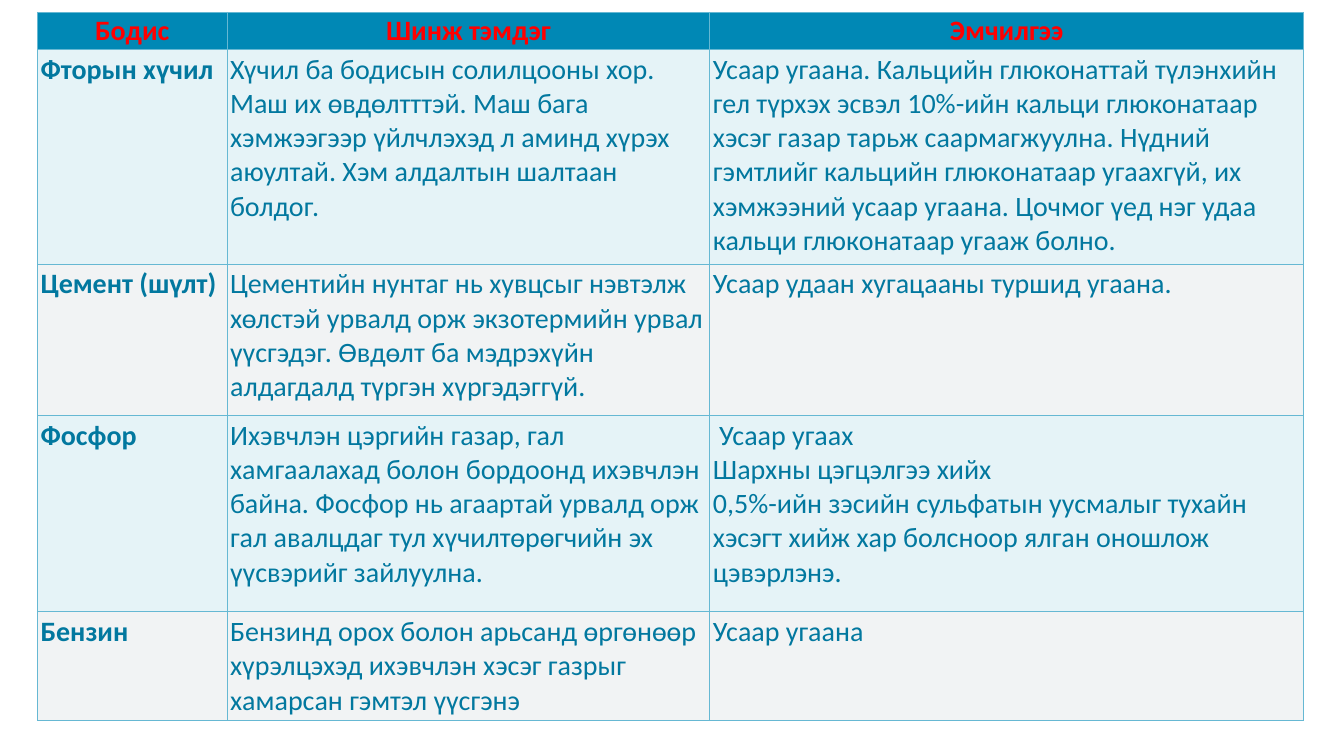
import pptx
import pptx.dml.color
import pptx.enum.text
import pptx.oxml
import pptx.oxml.ns
import pptx.util

Pt = pptx.util.Pt
PP_ALIGN = pptx.enum.text.PP_ALIGN
ANCHOR = pptx.enum.text.MSO_ANCHOR

COLORS = {
    "header": "0088B5",
    "heading": "FF0000",
    "body": "02789F",
    "odd": "E5F3F7",
    "even": "F1F3F4",
    "border": "66B8D3",
}
COLUMN_WIDTHS = [135.4, 344.9, 424.1]
ROW_HEIGHTS = [26.5, 153.4, 108, 140.4, 76]

# Each cell is text; a line break starts a new paragraph
HEADINGS = ["Бодис", "Шинж тэмдэг", "Эмчилгээ"]
SUBSTANCES = [
    [
        "Фторын хүчил",
        "Хүчил ба бодисын солилцооны хор. Маш их өвдөлтттэй. Маш бага хэмжээгээр "
        "үйлчлэхэд л аминд хүрэх аюултай. Хэм алдалтын шалтаан болдог.",
        "Усаар угаана. Кальцийн глюконаттай түлэнхийн гел түрхэх эсвэл 10%-ийн "
        "кальци глюконатаар хэсэг газар тарьж саармагжуулна. Нүдний гэмтлийг "
        "кальцийн глюконатаар угаахгүй, их хэмжээний усаар угаана. Цочмог үед "
        "нэг удаа кальци глюконатаар угааж болно.",
    ],
    [
        "Цемент (шүлт)",
        "Цементийн нунтаг нь хувцсыг нэвтэлж хөлстэй урвалд орж экзотермийн урвал "
        "үүсгэдэг. Өвдөлт ба мэдрэхүйн алдагдалд түргэн хүргэдэггүй.",
        "Усаар удаан хугацааны туршид угаана.",
    ],
    [
        "Фосфор",
        "Ихэвчлэн цэргийн газар, гал хамгаалахад болон бордоонд ихэвчлэн байна. "
        "Фосфор нь агаартай урвалд орж гал авалцдаг тул хүчилтөрөгчийн эх "
        "үүсвэрийг зайлуулна.",
        " Усаар угаах\nШархны цэгцэлгээ хийх\n0,5%-ийн зэсийн сульфатын уусмалыг "
        "тухайн хэсэгт хийж хар болсноор ялган оношлож цэвэрлэнэ.",
    ],
    [
        "Бензин",
        "Бензинд орох болон арьсанд өргөнөөр хүрэлцэхэд ихэвчлэн хэсэг газрыг "
        "хамарсан гэмтэл үүсгэнэ",
        "Усаар угаана",
    ],
]


def rgb(name):
    return pptx.dml.color.RGBColor.from_string(COLORS[name])


def write_text(frame, text, color, bold=False, align=PP_ALIGN.LEFT, size=20):
    for index, line in enumerate(text.split("\n")):
        para = frame.paragraphs[0] if index == 0 else frame.add_paragraph()
        para.alignment = align
        span = para.add_run()
        span.text = line
        span.font.name = "Calibri"
        span.font.size = Pt(size)
        span.font.bold = bold
        span.font.color.rgb = rgb(color)


def style_cell(cell, fill, inset):
    cell.margin_left = cell.margin_right = Pt(2.2)
    cell.margin_top = cell.margin_bottom = Pt(inset)
    # Borders come before the fill in the cell properties
    properties = cell._tc.get_or_add_tcPr()
    for side in ("lnL", "lnR", "lnT", "lnB"):
        properties.append(pptx.oxml.parse_xml(
            f'<a:{side} {pptx.oxml.ns.nsdecls("a")} w="{Pt(0.75)}"><a:solidFill>'
            f'<a:srgbClr val="{COLORS["border"]}"/></a:solidFill></a:{side}>'))
    cell.fill.solid()
    cell.fill.fore_color.rgb = rgb(fill)


def add_treatment_table(page, left, top, width, height):
    rows = [HEADINGS] + SUBSTANCES
    table = page.shapes.add_table(len(rows), len(HEADINGS), Pt(left), Pt(top),
                                  Pt(width), Pt(height)).table
    for column, column_width in zip(table.columns, COLUMN_WIDTHS):
        column.width = Pt(column_width)
    for row, row_height in zip(table.rows, ROW_HEIGHTS):
        row.height = Pt(row_height)

    # Header row
    for cell, text in zip(table.rows[0].cells, HEADINGS):
        style_cell(cell, "header", 0.7)
        cell.vertical_anchor = ANCHOR.MIDDLE
        write_text(cell.text_frame, text, "heading", bold=True, align=PP_ALIGN.CENTER)

    # One banded row per substance
    for number, texts in enumerate(SUBSTANCES, 1):
        for position, text in enumerate(texts):
            cell = table.cell(number, position)
            style_cell(cell, "odd" if number % 2 else "even", 2.2)
            cell.vertical_anchor = ANCHOR.TOP
            write_text(cell.text_frame, text, "body", bold=position == 0)


def main():
    deck = pptx.Presentation()
    deck.slide_width, deck.slide_height = Pt(960), Pt(540)
    page = deck.slides.add_slide(deck.slide_layouts[6])
    add_treatment_table(page, 26.8, 8.8, sum(COLUMN_WIDTHS), sum(ROW_HEIGHTS))
    deck.save("out.pptx")


if __name__ == "__main__":
    main()
